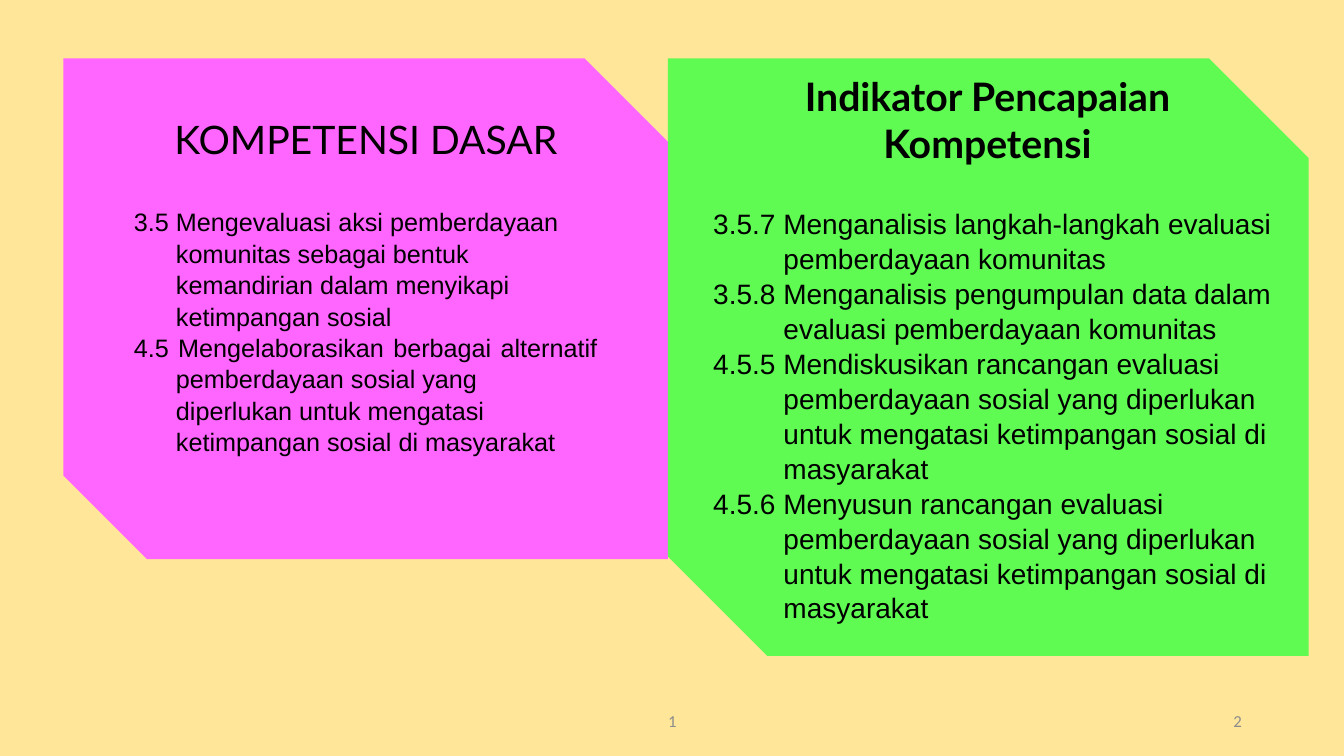
from lxml.etree import SubElement
from pptx import Presentation
from pptx.dml.color import RGBColor
from pptx.enum.shapes import MSO_SHAPE
from pptx.enum.text import MSO_ANCHOR, MSO_AUTO_SIZE, PP_ALIGN
from pptx.oxml.ns import qn
from pptx.util import Cm, Pt

CREAM = RGBColor(0xFF, 0xE6, 0x99)
PINK = RGBColor(0xFF, 0x65, 0xFF)
GREEN = RGBColor(0x5F, 0xFB, 0x53)
BLACK = RGBColor(0, 0, 0)
GRAY = RGBColor(0x8C, 0x8C, 0x8C)

HEAD = {"name": "Lato", "size": Pt(28), "bold": False}
BOLD = {**HEAD, "bold": True}
BASIC = {"name": "Arial", "size": Pt(18), "bold": False}
GOALS = {**BASIC, "size": Pt(20)}
NUMBER = {"name": "Calibri", "size": Pt(12), "bold": False}

# The line that ends in a space is stretched to the full width.
BASIC_LINES = [
    "3.5 Mengevaluasi aksi pemberdayaan",
    "komunitas sebagai bentuk",
    "kemandirian dalam menyikapi",
    "ketimpangan sosial",
    "4.5 Mengelaborasikan berbagai alternatif ",
    "pemberdayaan sosial yang",
    "diperlukan untuk mengatasi",
    "ketimpangan sosial di masyarakat",
]
GOAL_LINES = [
    "3.5.7 Menganalisis langkah-langkah evaluasi",
    "pemberdayaan komunitas",
    "3.5.8 Menganalisis pengumpulan data dalam",
    "evaluasi pemberdayaan komunitas",
    "4.5.5 Mendiskusikan rancangan evaluasi",
    "pemberdayaan sosial yang diperlukan",
    "untuk mengatasi ketimpangan sosial di",
    "masyarakat",
    "4.5.6 Menyusun rancangan evaluasi",
    "pemberdayaan sosial yang diperlukan",
    "untuk mengatasi ketimpangan sosial di",
    "masyarakat",
]


def place(shape, box):
    for key, value in zip(("left", "top", "width", "height"), box):
        setattr(shape, key, Cm(value))


def write(shape, lines, style, align, color=BLACK, hang=0, level=0,
          anchor=MSO_ANCHOR.TOP, gap=1.0):
    """Fill a shape; lines without a leading number are indented by hang."""
    frame = shape.text_frame
    frame.word_wrap = True
    frame.auto_size = MSO_AUTO_SIZE.NONE
    frame.vertical_anchor = anchor
    frame.text = "\n".join(lines)
    for para in frame.paragraphs:
        form = {"alignment": align, "level": level, "line_spacing": gap,
                "space_before": Pt(0), "space_after": Pt(0)}
        for key, value in form.items():
            setattr(para, key, value)
        props = para.runs[0].font
        for key, value in style.items():
            setattr(props, key, value)
        props.color.rgb = color
        inset = 0 if para.text[0].isdigit() else hang
        node = para.runs[0]._r.getparent().get_or_add_pPr()
        node.set("marL", str(Cm(inset)))
        node.set("indent", "0")
        SubElement(node, qn("a:buNone"))


def panel(slide, box, fill, head, body):
    """Draw a snipped panel; head and body boxes are offsets within it."""
    left, top = box[:2]
    card = slide.shapes.add_shape(MSO_SHAPE.SNIP_2_DIAG_RECTANGLE, 0, 0, 0, 0)
    place(card, box)
    card.shadow.inherit = False
    card.fill.solid()
    card.fill.fore_color.rgb = fill
    card.line.fill.background()
    for part in (body, head):
        hold = part["hold"]
        dx, dy, width, height = part["box"]
        place(hold, (left + dx, top + dy, width, height))
        card.element.getparent().append(hold.element)
        write(hold, **part["text"])


def number(slide, box, text, align):
    mark = slide.shapes.add_textbox(0, 0, 0, 0)
    place(mark, box)
    write(mark, [text], NUMBER, align, GRAY, anchor=MSO_ANCHOR.MIDDLE)


def build():
    deck = Presentation()
    deck.slide_width, deck.slide_height = Cm(33.87), Cm(19.05)
    slide = deck.slides.add_slide(deck.slide_layouts[4])
    slide.background.fill.solid()
    slide.background.fill.fore_color.rgb = CREAM
    holds = {item.placeholder_format.idx: item for item in slide.placeholders}
    spare = holds[1].element
    spare.getparent().remove(spare)

    panel(slide, (1.6, 1.47, 15.23, 12.62), PINK,
          {"hold": holds[0], "box": (2.44, 1.3, 10.36, 1.45),
           "text": {"lines": ["KOMPETENSI DASAR"], "style": HEAD,
                    "align": PP_ALIGN.CENTER}},
          {"hold": holds[2], "box": (1.52, 3.58, 12.19, 7.19),
           "text": {"lines": BASIC_LINES, "style": BASIC, "hang": 1.06,
                    "align": PP_ALIGN.JUSTIFY, "gap": 1.04}})
    panel(slide, (16.83, 1.47, 16.15, 15.06), GREEN,
          {"hold": holds[3], "box": (1.35, 0.23, 13.41, 2.64),
           "text": {"lines": ["Indikator Pencapaian Kompetensi"],
                    "style": BOLD, "align": PP_ALIGN.CENTER}},
          {"hold": holds[4], "box": (0.89, 3.58, 15.27, 11.38),
           "text": {"lines": GOAL_LINES, "style": GOALS, "hang": 1.77,
                    "align": PP_ALIGN.JUSTIFY, "level": 1, "gap": 1.04}})
    number(slide, (11.23, 17.65, 11.43, 1.02), "1", PP_ALIGN.CENTER)
    number(slide, (23.93, 17.65, 7.62, 1.02), "2", PP_ALIGN.RIGHT)
    deck.save("out.pptx")


if __name__ == "__main__":
    build()
